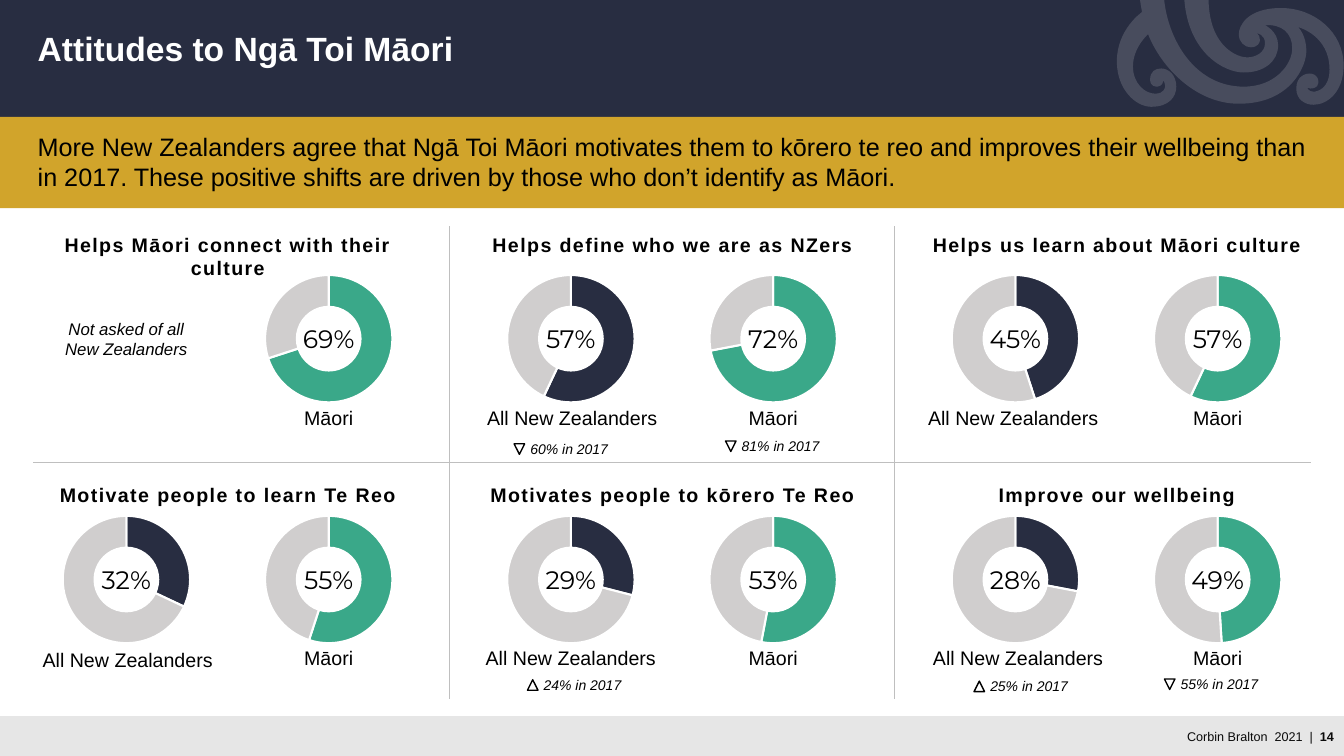
from dataclasses import dataclass

from lxml import etree
from pptx import Presentation
from pptx.chart.data import CategoryChartData
from pptx.dml.color import RGBColor
from pptx.enum import chart as charts, shapes, text
from pptx.oxml import ns, parse_xml
from pptx.util import Pt


@dataclass(frozen=True)
class Theme:
    navy: str = "282D41"
    gold: str = "D1A42B"
    green: str = "3AA889"
    remainder: str = "D0CECE"
    rule: str = "BFBFBF"
    footer: str = "E6E6E6"
    footer_text: str = "0A0A0A"
    white: str = "FFFFFF"
    black: str = "000000"
    font: str = "Arial"
    number_font: str = "Montserrat"
    title: int = 24
    lead: int = 18
    heading: int = 14
    note: int = 12
    change: int = 10
    small: int = 9


THEME = Theme()
WIDTH, HEIGHT = 960, 540
COLUMN_LEFT, COLUMN_PITCH, COLUMN_WIDTH = 23.75, 317.5, 278
DONUT_WIDTH, DONUT_HEIGHT = 167, 111
RING = 91
HEADING_TOPS = (162.5, 341.5)
DONUT_TOPS = (186.5, 358.5)
# Group: caption, colour, centre measured from the left of the column
GROUPS = (("All New Zealanders", THEME.navy, 66.5), ("Māori", THEME.green, 211))

# Heading, then for each group: label, charted share, the 2017 change as
# (direction, text, offset of its marker from the donut centre and top),
# and the shift of the caption where it is not centred under the donut
PANELS = (
    (("Helps Māori connect with their culture", None, (69, 70, None, 0, 0)),
     ("Helps define who we are as NZers",
      (57, 57, ("down", "60% in 2017", -40.5, 130.5), 1, 0),
      (72, 72, ("down", "81% in 2017", -34, 128.5), 0, 0)),
     ("Helps us learn about Māori culture",
      (45, 45, None, -1.5, 0), (57, 57, None, 0, 0))),
    (("Motivate people to learn Te Reo", (32, 32, None, 1, 1.5), (55, 55, None, 0, 0)),
     ("Motivates people to kōrero Te Reo",
      (29, 29, ("up", "24% in 2017", -31, 127), 0, 0), (53, 53, None, 0, 0)),
     ("Improve our wellbeing",
      (28, 28, ("up", "25% in 2017", -29.5, 128), 2, 0),
      (49, 49, ("down", "55% in 2017", -38, 126.5), 0, 0))),
)

# Koru outline in hundredths of an inch: six numbers are a curve, two a line
KORU_START = (1108, 61)
KORU = (
    (1108, 89, 1127, 106, 1142, 106), (1160, 106, 1167, 96, 1167, 86),
    (1167, 74, 1159, 68, 1152, 68), (1146, 68, 1141, 71, 1141, 79),
    (1141, 86, 1147, 86, 1148, 86), (1149, 86, 1154, 85, 1154, 80),
    (1154, 80, 1156, 82, 1156, 85), (1156, 87, 1155, 93, 1146, 93),
    (1136, 93, 1124, 83, 1124, 66), (1124, 47, 1139, 34, 1139, 34),
    (1153, 69, 1188, 103, 1229, 103), (1281, 103, 1296, 65, 1296, 51),
    (1296, 45, 1295, 35, 1288, 27), (1288, 27, 1319, 35, 1319, 69),
    (1319, 88, 1307, 91, 1303, 91), (1298, 91, 1297, 87, 1297, 87),
    (1300, 89, 1308, 88, 1308, 82), (1308, 74, 1302, 73, 1299, 73),
    (1296, 73, 1286, 75, 1286, 88), (1286, 99, 1295, 104, 1303, 104),
    (1317, 104, 1333, 91, 1333, 65), (1333, 32, 1304, 8, 1271, 8),
    (1237, 8, 1229, 26, 1229, 34), (1229, 42, 1235, 47, 1241, 47),
    (1248, 47, 1250, 42, 1250, 40), (1250, 37, 1249, 34, 1247, 33),
    (1247, 33, 1255, 34, 1255, 43), (1255, 52, 1246, 57, 1237, 57),
    (1229, 57, 1200, 48, 1199, 0), (1175, 0),
    (1179, 52, 1214, 72, 1234, 72), (1254, 72, 1268, 61, 1268, 45),
    (1268, 31, 1255, 25, 1255, 25), (1272, 24, 1282, 33, 1282, 48),
    (1282, 64, 1265, 86, 1234, 86), (1185, 86, 1159, 39, 1155, 0),
    (1131, 0), (1132, 7, 1133, 12, 1133, 12), (1133, 12, 1108, 29, 1108, 61),
)


def color(value):
    return RGBColor.from_string(value)


def add_band(slide, top, height, fill):
    band = slide.shapes.add_shape(shapes.MSO_SHAPE.RECTANGLE, 0, Pt(top), Pt(WIDTH), Pt(height))
    band.shadow.inherit = False
    band.fill.solid()
    band.fill.fore_color.rgb = color(fill)
    band.line.fill.background()


def add_text(slide, content, left, top, width, height, size, align=text.PP_ALIGN.LEFT,
             fill=THEME.black, font=THEME.font, bold=False, italic=False, spacing=None,
             middle=False, wrap=True, tracking=None):
    box = slide.shapes.add_textbox(Pt(left), Pt(top), Pt(width), Pt(height))
    frame = box.text_frame
    frame.text = content
    frame.word_wrap = wrap
    frame.vertical_anchor = text.MSO_ANCHOR.MIDDLE if middle else text.MSO_ANCHOR.TOP
    paragraph = frame.paragraphs[0]
    paragraph.alignment = align
    paragraph.line_spacing = spacing
    for run in paragraph.runs:
        run.font.size, run.font.name = Pt(size), font
        run.font.bold, run.font.italic = bold, italic
        run.font.color.rgb = color(fill)
        if tracking:
            run.font._element.set("spc", str(tracking * 100))
    return paragraph


def add_rule(slide, x1, y1, x2, y2):
    rule = slide.shapes.add_connector(shapes.MSO_CONNECTOR.STRAIGHT, Pt(x1), Pt(y1), Pt(x2), Pt(y2))
    rule.line.color.rgb = color(THEME.rule)
    rule.line.width = Pt(0.5)
    etree.SubElement(rule._element.spPr, ns.qn("a:effectLst"))


def add_koru(slide):
    """Draw the pale spiral in the header, bending straight segments into curves."""
    builder = slide.shapes.build_freeform(*KORU_START, scale=Pt(0.72))
    builder.add_line_segments([segment[-2:] for segment in KORU], close=True)
    koru = builder.convert_to_shape()
    left = min(segment[-2] for segment in KORU)
    top = min(segment[-1] for segment in KORU)
    lines = list(koru._element.iter(ns.qn("a:lnTo")))
    for line, segment in zip(lines, KORU):
        if len(segment) == 6:
            line.tag = ns.qn("a:cubicBezTo")
            line.remove(line[0])
            for x, y in zip(segment[::2], segment[1::2]):
                etree.SubElement(line, ns.qn("a:pt"), x=str(x - left), y=str(y - top))
    koru.shadow.inherit = False
    koru.fill.solid()
    koru.fill.fore_color.rgb = color(THEME.white)
    koru.line.fill.background()
    swatch = koru._element.spPr.find(".//" + ns.qn("a:srgbClr"))
    etree.SubElement(swatch, ns.qn("a:alpha")).set("val", "15000")


def add_donut(slide, center, top, share, fill):
    data = CategoryChartData()
    data.categories = ["1", "2"]
    data.add_series("Series 1", (share, 100 - share))
    chart = slide.shapes.add_chart(
        charts.XL_CHART_TYPE.DOUGHNUT, Pt(center - DONUT_WIDTH / 2), Pt(top),
        Pt(DONUT_WIDTH), Pt(DONUT_HEIGHT), data).chart
    chart.has_legend = chart.has_title = False
    chart.font.name, chart.font.size = THEME.font, Pt(THEME.change)
    chart.font.color.rgb = color(THEME.black)
    plot = chart.plots[0]
    plot.vary_by_categories = True
    for index, point_fill in enumerate((fill, THEME.remainder)):
        point = plot.series[0].points[index].format
        point.fill.solid()
        point.fill.fore_color.rgb = color(point_fill)
        point.line.color.rgb = color(THEME.white)
        point.line.width = Pt(1.5)
    plot._element.find(ns.qn("c:holeSize")).set("val", "75")
    area = chart._chartSpace.chart.plotArea
    for layout in area.findall(ns.qn("c:layout")):
        area.remove(layout)
    w, h = RING / DONUT_WIDTH, RING / DONUT_HEIGHT
    area.insert(0, parse_xml(
        f'<c:layout {ns.nsdecls("c")}><c:manualLayout><c:layoutTarget val="inner"/>'
        f'<c:xMode val="edge"/><c:yMode val="edge"/><c:x val="{(1 - w) / 2:.3f}"/>'
        f'<c:y val="{(1 - h) / 2:.3f}"/><c:w val="{w:.3f}"/><c:h val="{h:.3f}"/>'
        '</c:manualLayout></c:layout>'))


def add_change(slide, direction, content, left, top):
    marker = slide.shapes.add_shape(shapes.MSO_SHAPE.ISOSCELES_TRIANGLE,
                                    Pt(left), Pt(top), Pt(7.5), Pt(7.5))
    marker.rotation = 180 if direction == "down" else 0
    marker.shadow.inherit = False
    marker.fill.solid()
    marker.fill.fore_color.rgb = color(THEME.white)
    marker.line.color.rgb = color(THEME.black)
    marker.line.width = Pt(1)
    add_text(slide, content, left + 4.5, top - 6, 70.5, 19.5, THEME.change,
             italic=True, middle=True, wrap=False)


def add_panel(slide, left, heading_top, top, heading, *results):
    centered = text.PP_ALIGN.CENTER
    add_text(slide, heading, left, heading_top, COLUMN_WIDTH, 24, THEME.heading,
             centered, bold=True, tracking=1)
    for (caption, fill, offset), result in zip(GROUPS, results):
        center = left + offset
        if result is None:
            add_text(slide, "Not asked of all\vNew Zealanders", center - 51, top + 37.5, 102, 36,
                     THEME.note, centered, italic=True, middle=True, wrap=False)
            continue
        label, share, change, shift_x, shift_y = result
        add_donut(slide, center, top, share, fill)
        add_text(slide, f"{label}%", center - 28.5, top + 41, 57, 29, THEME.lead, centered,
                 font=THEME.number_font, middle=True, wrap=False)
        add_text(slide, caption, center - 74 + shift_x, top + 101.5 + shift_y, 148, 22,
                 THEME.heading, centered, spacing=0.9)
        if change:
            direction, content, dx, dy = change
            add_change(slide, direction, content, center + dx, top + dy)


def main():
    presentation = Presentation()
    presentation.slide_width, presentation.slide_height = Pt(WIDTH), Pt(HEIGHT)
    slide = presentation.slides.add_slide(presentation.slide_layouts[6])
    add_band(slide, 0, 85, THEME.navy)
    add_koru(slide)
    add_band(slide, 511.5, 28.5, THEME.footer)
    footer = add_text(slide, "Corbin Bralton  2021  |  ", 833, 517, 127, 18, THEME.small,
                      text.PP_ALIGN.RIGHT, THEME.footer_text, middle=True, wrap=False)
    number = footer.add_run()
    number.text = "14"
    number.font.size, number.font.name, number.font.bold = Pt(THEME.small), THEME.font, True
    number.font.color.rgb = color(THEME.footer_text)
    add_band(slide, 83.5, 65.25, THEME.gold)
    add_text(slide, "Attitudes to Ngā Toi Māori", 19.8, 20, 921, 33, THEME.title,
             fill=THEME.white, bold=True, spacing=0.9)
    add_text(slide, "More New Zealanders agree that Ngā Toi Māori motivates them to kōrero te reo "
             "and improves their wellbeing than in 2017. These positive shifts are driven by "
             "those who don’t identify as Māori.", 19.8, 90, 924, 51, THEME.lead)
    add_rule(slide, COLUMN_LEFT, 330.5, 936.5, 330.5)
    for column in (1, 2):
        x = COLUMN_LEFT - 20 + column * COLUMN_PITCH
        add_rule(slide, x, 161.5, x, 499)
    for row, heading_top, donut_top in zip(PANELS, HEADING_TOPS, DONUT_TOPS):
        for column, panel in enumerate(row):
            add_panel(slide, COLUMN_LEFT + column * COLUMN_PITCH, heading_top, donut_top, *panel)
    presentation.save("out.pptx")


if __name__ == "__main__":
    main()
